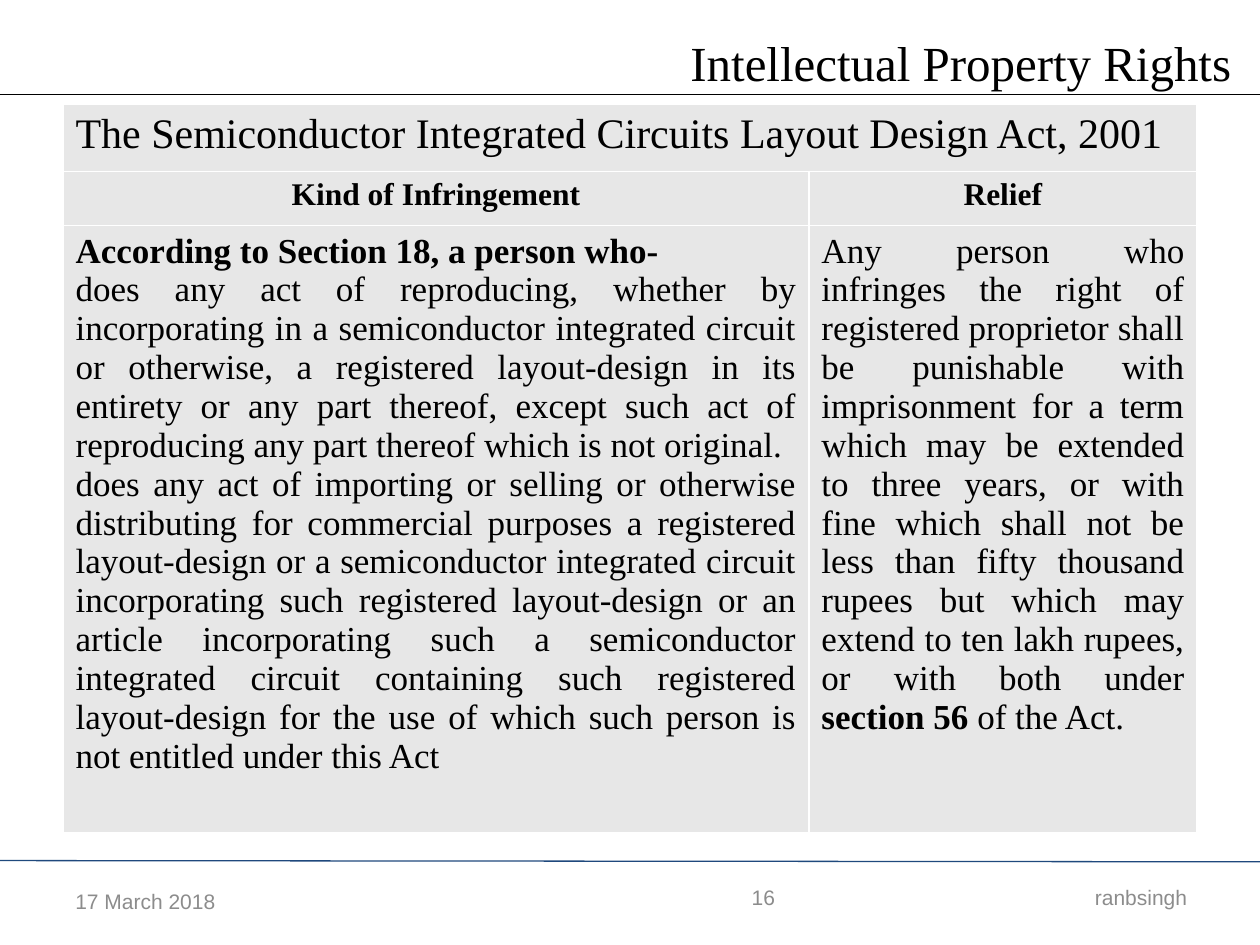
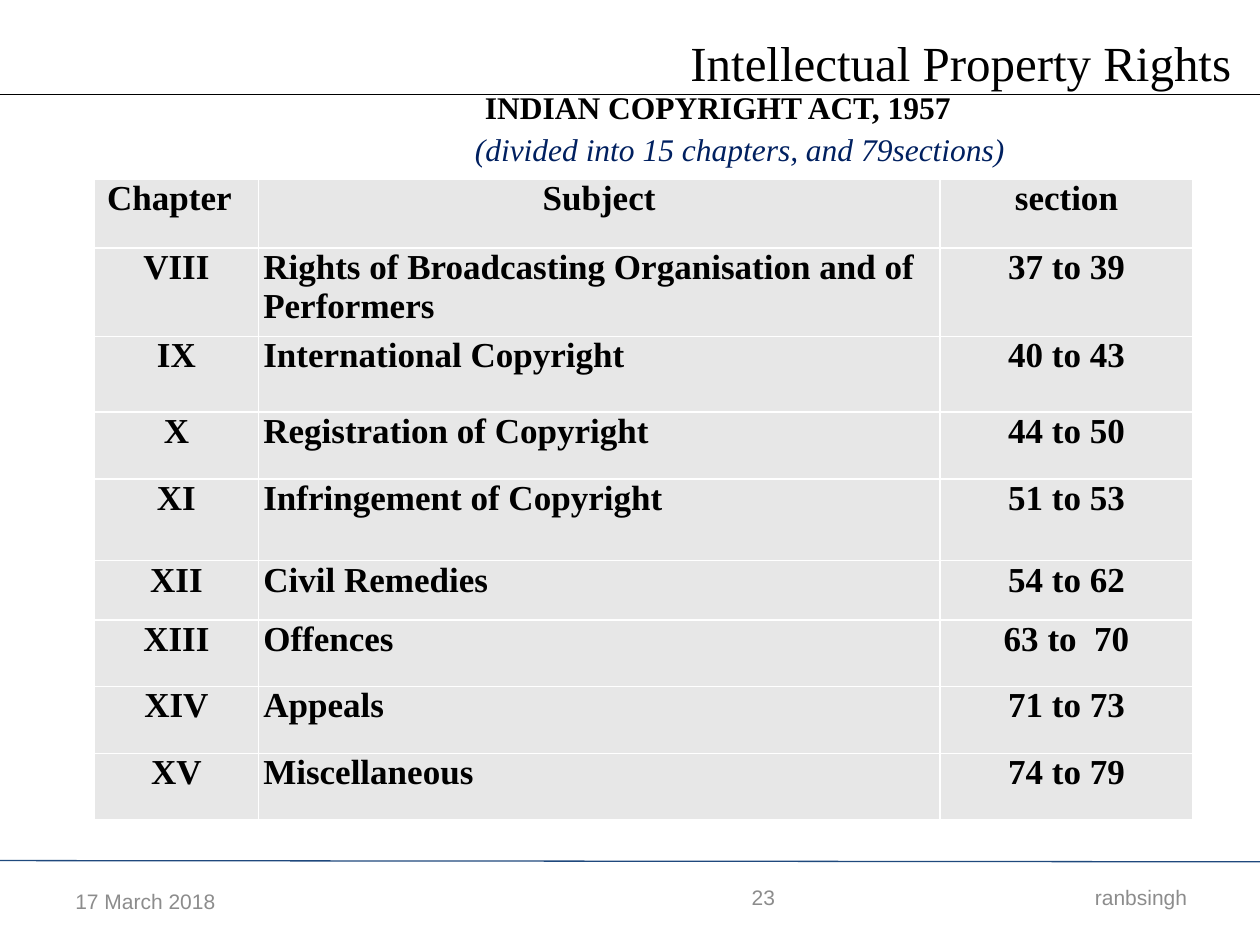
"""Build two Intellectual Property Rights slides: an infringement table and a chapter table."""
from lxml import etree
from pptx import Presentation
from pptx.dml.color import RGBColor
from pptx.enum.shapes import MSO_CONNECTOR
from pptx.enum.text import MSO_ANCHOR, MSO_AUTO_SIZE, PP_ALIGN
from pptx.oxml.ns import qn
from pptx.util import Inches, Pt

LEFT, CENTER, RIGHT, JUSTIFY = PP_ALIGN.LEFT, PP_ALIGN.CENTER, PP_ALIGN.RIGHT, PP_ALIGN.JUSTIFY
TOP, MIDDLE = MSO_ANCHOR.TOP, MSO_ANCHOR.MIDDLE
STRAIGHT = MSO_CONNECTOR.STRAIGHT
NO_FIT = MSO_AUTO_SIZE.NONE

BLACK = RGBColor(0x00, 0x00, 0x00)
WHITE = RGBColor(0xFF, 0xFF, 0xFF)
RULE_BLUE = RGBColor(0x1F, 0x49, 0x7D)
NAVY = RGBColor(0x00, 0x20, 0x60)
GRAY = RGBColor(0x8C, 0x8C, 0x8C)
CELL_GRAY = RGBColor(0xE7, 0xE7, 0xE7)
SERIF, SANS = "Times New Roman", "Arial"

TITLE = "Intellectual Property Rights"
DATE, AUTHOR = "17 March 2018", "ranbsingh"

ACT = "The Semiconductor Integrated Circuits Layout Design Act, 2001"
HEADS = ["Kind of Infringement", "Relief"]
INFRINGEMENT = [
    (LEFT, [("According to Section 18, a person who-", True)]),
    (JUSTIFY, [("does any act of reproducing, whether by incorporating in a semiconductor "
                "integrated circuit or otherwise, a registered layout-design in its entirety or any "
                "part thereof, except such act of reproducing any part thereof which is not "
                "original.", False)]),
    (JUSTIFY, [("does any act of importing or selling or otherwise distributing for commercial "
                "purposes a registered layout-design or a semiconductor integrated circuit "
                "incorporating such registered layout-design or an article incorporating such a "
                "semiconductor integrated circuit containing such registered layout-design for the "
                "use of which such person is not entitled under this Act", False)]),
]
RELIEF = [
    (JUSTIFY, [("Any person who infringes the right of registered proprietor shall be punishable "
                "with imprisonment for a term which may be extended to three years, or with fine "
                "which shall not be less than fifty thousand rupees but which may extend to ten "
                "lakh rupees, or with both under ", False),
               ("section 56", True), (" of the Act.", False)]),
]

COPYRIGHT_ACT = "INDIAN COPYRIGHT ACT, 1957"
DIVISION = "(divided into 15 chapters, and 79sections)"
CHAPTERS = [
    ("Chapter", "Subject", "section"),
    ("VIII", "Rights of Broadcasting Organisation and of Performers", "37 to 39"),
    ("IX", "International Copyright", "40 to 43"),
    ("X", "Registration of Copyright", "44 to 50"),
    ("XI", "Infringement of Copyright", "51 to 53"),
    ("XII", "Civil Remedies", "54 to 62"),
    ("XIII", "Offences", "63 to  70"),
    ("XIV", "Appeals", "71 to 73"),
    ("XV", "Miscellaneous", "74 to 79"),
]
CHAPTER_HEIGHTS = [0.55, 0.7, 0.6, 0.53, 0.65, 0.47, 0.53, 0.53, 0.53]


def style(p, size, color=BLACK, font=SERIF, bold=False, italic=False, align=LEFT):
    p.alignment = align
    for r in p.runs:
        f = r.font
        f.name, f.size, f.bold, f.italic = font, Pt(size), bold, italic
        f.color.rgb = color


def add_text(slide, text, box, size, anchor=MIDDLE, **look):
    sp = slide.shapes.add_textbox(*map(Inches, box))
    tf = sp.text_frame
    tf.word_wrap, tf.vertical_anchor = True, anchor
    tf.text = text
    style(tf.paragraphs[0], size, **look)
    return tf.paragraphs[0]


def add_rule(slide, y1, y2, color):
    line = slide.shapes.add_connector(STRAIGHT, 0, Inches(y1), Inches(10), Inches(y2))
    line.line.color.rgb, line.line.width = color, Pt(0.75)
    etree.SubElement(line._element.spPr, qn("a:effectLst"))


def add_slide(prs, number):
    slide = prs.slides.add_slide(prs.slide_layouts[5])
    add_rule(slide, 0.75, 0.75, BLACK)
    add_rule(slide, 6.83, 6.84, RULE_BLUE)
    sp = slide.shapes.title
    sp.left, sp.top, sp.width, sp.height = map(Inches, (5.38, 0.21, 4.54, 0.57))
    tf = sp.text_frame
    tf.text = TITLE
    tf.word_wrap, tf.auto_size, tf.vertical_anchor = True, NO_FIT, TOP
    style(tf.paragraphs[0], 28)
    for text, box, align in [
        (DATE, (0.5, 6.95, 2.33, 0.4), LEFT),
        (str(number), (3.92, 6.92, 2.33, 0.4), RIGHT),
        (AUTHOR, (6.67, 6.92, 2.85, 0.4), RIGHT),
    ]:
        add_text(slide, text, box, 12, color=GRAY, font=SANS, align=align)
    return slide


def format_cell(cell, margin_x, margin_y):
    cell.margin_left = cell.margin_right = Inches(margin_x)
    cell.margin_top = cell.margin_bottom = Inches(margin_y)
    tcPr = cell._tc.get_or_add_tcPr()
    for side in ("lnL", "lnR", "lnT", "lnB"):
        ln = etree.SubElement(tcPr, qn(f"a:{side}"), w=str(Pt(1)))
        fill = etree.SubElement(ln, qn("a:solidFill"))
        etree.SubElement(fill, qn("a:srgbClr"), val=str(WHITE))
    cell.fill.solid()
    cell.fill.fore_color.rgb = CELL_GRAY


def add_table(slide, left, top, widths, heights, margin_x, margin_y):
    box = map(Inches, (left, top, sum(widths), sum(heights)))
    table = slide.shapes.add_table(len(heights), len(widths), *box).table
    for column, width in zip(table.columns, widths):
        column.width = Inches(width)
    for row, height in zip(table.rows, heights):
        row.height = Inches(height)
    for cell in table.iter_cells():
        format_cell(cell, margin_x, margin_y)
    return table


def set_cell(cell, text, size, **look):
    cell.text = text
    style(cell.text_frame.paragraphs[0], size, **look)


def fill_cell(cell, paragraphs, size):
    tf = cell.text_frame
    for i, (align, runs) in enumerate(paragraphs):
        p = tf.add_paragraph() if i else tf.paragraphs[0]
        for text, _ in runs:
            p.add_run().text = text
        style(p, size, align=align)
        for r, (_, bold) in zip(p.runs, runs):
            r.font.bold = bold


def build_infringement(prs):
    slide = add_slide(prs, 16)
    table = add_table(slide, 0.5, 0.83, [5.92, 3.08], [0.53, 0.43, 4.82], 0.1, 0.05)
    table.cell(0, 0).merge(table.cell(0, 1))
    set_cell(table.cell(0, 0), ACT, 24)
    for c, (head, body) in enumerate(zip(HEADS, (INFRINGEMENT, RELIEF))):
        set_cell(table.cell(1, c), head, 18, bold=True, align=CENTER)
        fill_cell(table.cell(2, c), body, 20)


def build_chapters(prs):
    slide = add_slide(prs, 23)
    add_text(slide, COPYRIGHT_ACT, (3.75, 0.53, 4.17, 0.64), 18, bold=True)
    p = add_text(slide, DIVISION, (3.67, 1.08, 4.58, 0.25), 18, TOP, color=NAVY, italic=True)
    p.line_spacing = 0.65
    table = add_table(slide, 0.75, 1.42, [1.3, 5.41, 2.01], CHAPTER_HEIGHTS, 0.04, 0)
    for i, row in enumerate(CHAPTERS):
        for c, text in enumerate(row):
            align = LEFT if c == 1 and i else CENTER
            set_cell(table.cell(i, c), text, 20, bold=True, align=align)
    corner = table.cell(0, 0)
    corner.margin_left = Inches(0.1)
    corner.text_frame.paragraphs[0].alignment = LEFT


def main():
    prs = Presentation()
    prs.slide_width, prs.slide_height = Inches(10), Inches(7.5)
    build_infringement(prs)
    build_chapters(prs)
    prs.save("out.pptx")


if __name__ == "__main__":
    main()
